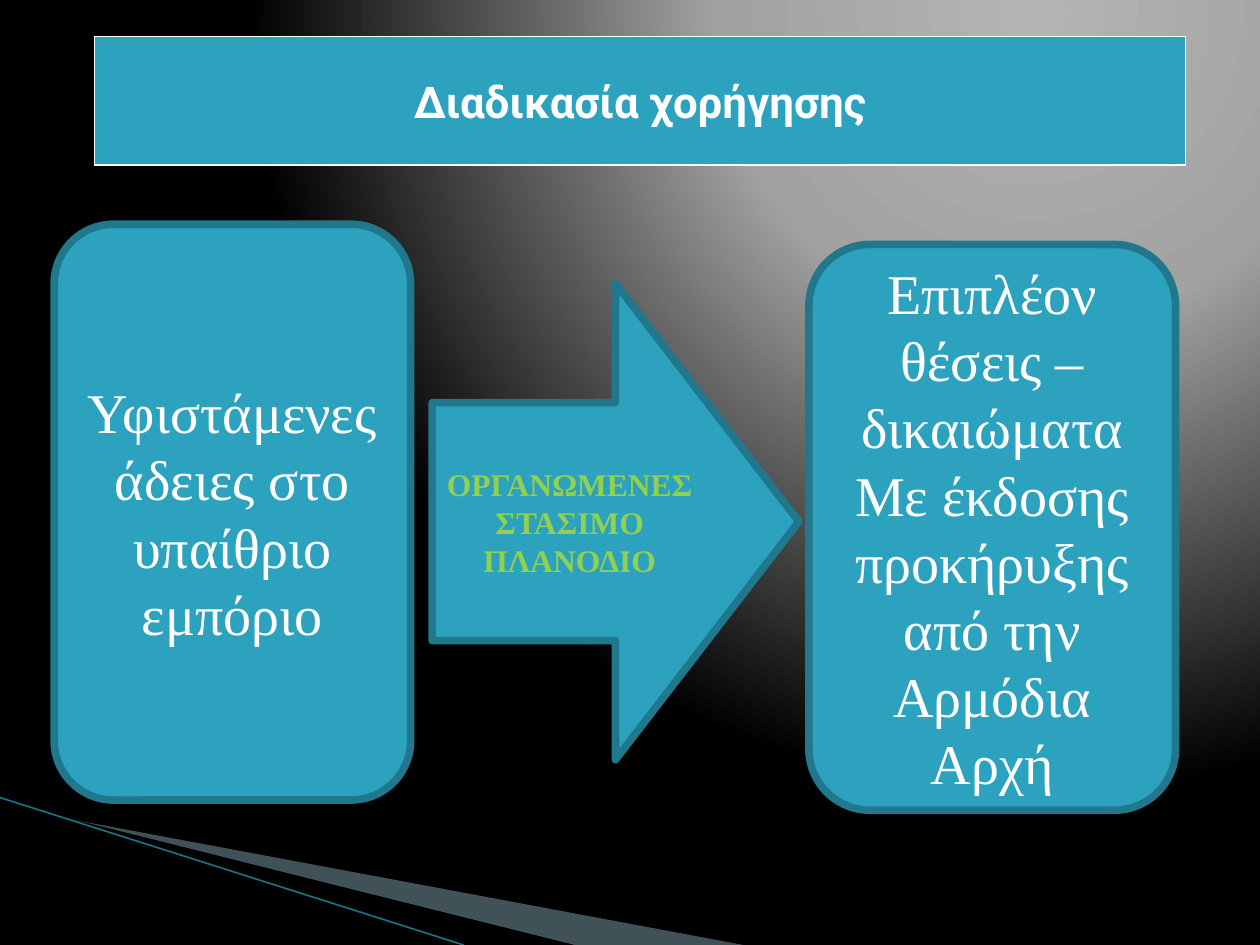
import pptx
import pptx.dml.color
import pptx.enum.shapes
import pptx.enum.text
import pptx.oxml
import pptx.oxml.ns
import pptx.util
from lxml import etree

Inches = pptx.util.Inches
Pt = pptx.util.Pt
Kind = pptx.enum.shapes.MSO_SHAPE
qn = pptx.oxml.ns.qn

TEAL, EDGE, WHITE, LIME = "2DA2BF", "21788D", "FFFFFF", "92D050"
BODY = {"name": "Times New Roman", "size": Pt(32), "bold": False}
LABEL = {"name": "Times New Roman", "size": Pt(18), "bold": True}
TITLE = {"name": "Roboto", "size": Pt(25), "bold": True}


def hue(code):
    return pptx.dml.color.RGBColor.from_string(code)


class Deck:
    """Draws the elements of the current slide in one style."""

    def __init__(self):
        self.file = pptx.Presentation()
        self.file.slide_width, self.file.slide_height = Inches(10), Inches(7.5)
        self.slide = self.file.slides.add_slide(self.file.slide_layouts[6])
        self.shapes = self.slide.shapes

    def glow(self, stops, focus):
        self.slide.background.fill.gradient()
        grad = self.slide.element.find(".//" + qn("a:gradFill"))
        for child in list(grad):
            grad.remove(child)
        row = etree.SubElement(grad, qn("a:gsLst"))
        for spot, code in stops:
            stop = etree.SubElement(row, qn("a:gs"), pos=str(spot * 1000))
            etree.SubElement(stop, qn("a:srgbClr"), val=code)
        ring = etree.SubElement(grad, qn("a:path"), {"path": "circle"})
        sides = {side: str(part * 1000) for side, part in focus.items()}
        etree.SubElement(ring, qn("a:fillToRect"), sides)

    def wedge(self, points, code, alpha=100):
        spots = [(Inches(x), Inches(y)) for x, y in points]
        pen = self.shapes.build_freeform(*spots[0])
        pen.add_line_segments(spots[1:])
        shape = pen.convert_to_shape()
        shape.shadow.inherit = False
        shape.fill.solid()
        shape.fill.fore_color.rgb = hue(code)
        shape.line.fill.background()
        if alpha < 100:
            tint = shape.fill._xPr.find(".//" + qn("a:srgbClr"))
            etree.SubElement(tint, qn("a:alpha"), val=str(alpha * 1000))

    def line(self, start, end, code, width):
        ends = [Inches(n) for n in (*start, *end)]
        link = self.shapes.add_connector(pptx.enum.shapes.MSO_CONNECTOR.STRAIGHT, *ends)
        link.line.color.rgb = hue(code)
        link.line.width = Pt(width)
        etree.SubElement(link._element.spPr, qn("a:effectLst"))

    def block(self, kind, place, lines, style, ink=WHITE, edge=EDGE, width=4.33):
        shape = self.shapes.add_shape(kind, *[Inches(n) for n in place])
        shape.shadow.inherit = False
        shape.fill.solid()
        shape.fill.fore_color.rgb = hue(TEAL)
        shape.line.color.rgb = hue(edge)
        shape.line.width = Pt(width)
        frame = shape.text_frame
        frame.word_wrap = True
        frame.vertical_anchor = pptx.enum.text.MSO_ANCHOR.MIDDLE
        for i, text in enumerate(lines):
            para = frame.paragraphs[0] if i == 0 else frame.add_paragraph()
            para.alignment = pptx.enum.text.PP_ALIGN.CENTER
            run = para.add_run()
            run.text = text
            for key, value in style.items():
                setattr(run.font, key, value)
            run.font.color.rgb = hue(ink)


def main():
    deck = Deck()
    deck.glow([(0, "B4B4B4"), (40, "A2A2A2"), (100, "000000")],
              {"l": 65, "t": 0, "r": 0, "b": 98})
    deck.wedge([(0.55, 6.5), (5.9, 7.5), (4.56, 7.5)], "A0CBDC", 40)
    deck.wedge([(0.53, 6.49), (4.55, 7.5), (3.72, 7.5)], "000000")
    deck.line((0, 6.33), (3.68, 7.5), "1C7084", 0.95)
    deck.block(Kind.ROUNDED_RECTANGLE, (0.43, 1.78, 2.83, 4.57),
               ["Υφιστάμενες άδειες στο υπαίθριο εμπόριο"], BODY)
    deck.block(Kind.RIGHT_ARROW, (3.43, 2.25, 2.91, 3.78),
               ["ΟΡΓΑΝΩΜΕΝΕΣ", "ΣΤΑΣΙΜΟ", "ΠΛΑΝΟΔΙΟ"], LABEL, LIME)
    deck.block(Kind.ROUNDED_RECTANGLE, (6.42, 1.94, 2.91, 4.49),
               ["Επιπλέον θέσεις – δικαιώματα",
                "Με έκδοσης προκήρυξης από την Αρμόδια Αρχή"], BODY)
    deck.block(Kind.RECTANGLE, (0.75, 0.29, 8.66, 1.02),
               ["Διαδικασία χορήγησης"], TITLE, edge=WHITE, width=1)
    deck.file.save("out.pptx")


if __name__ == "__main__":
    main()
